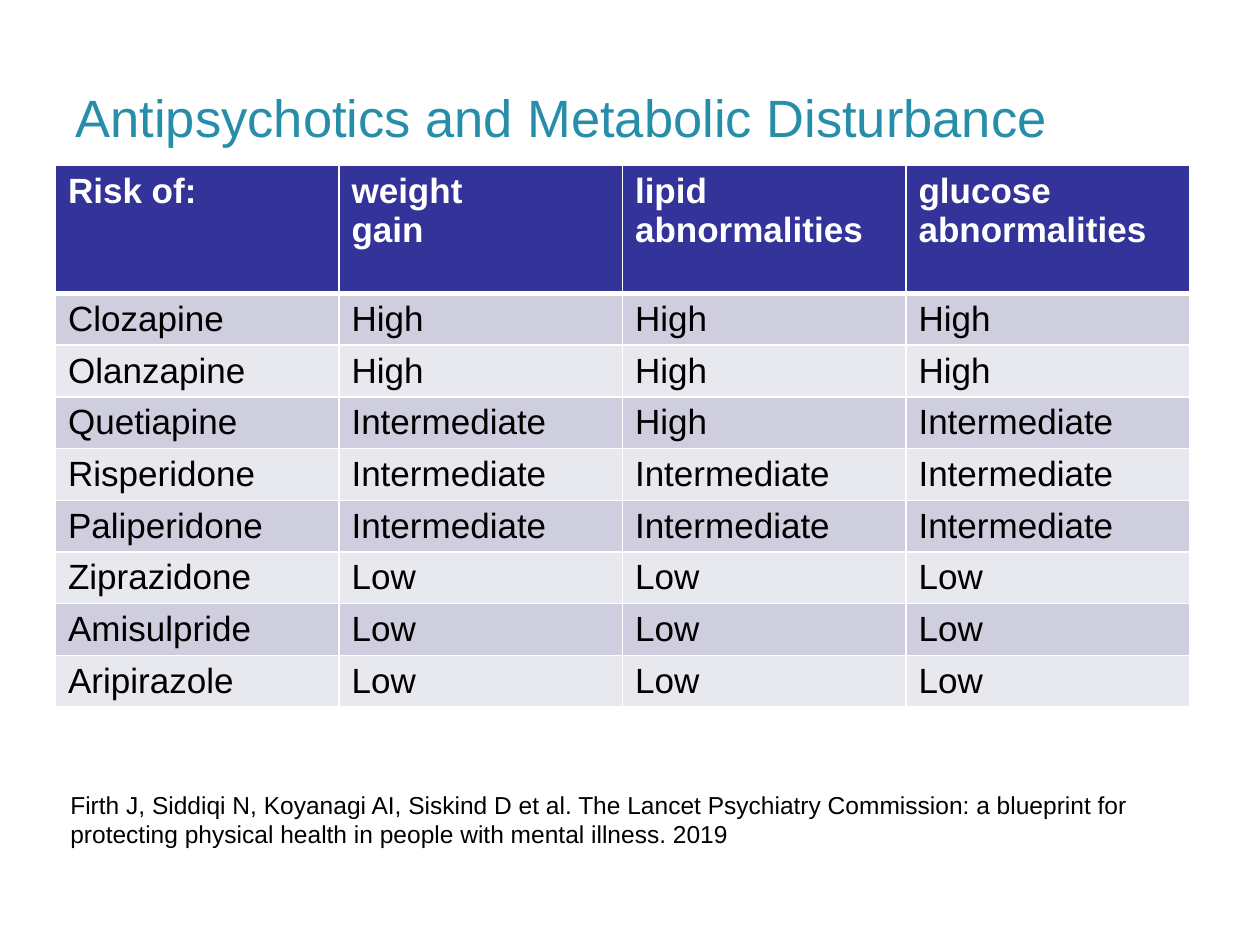
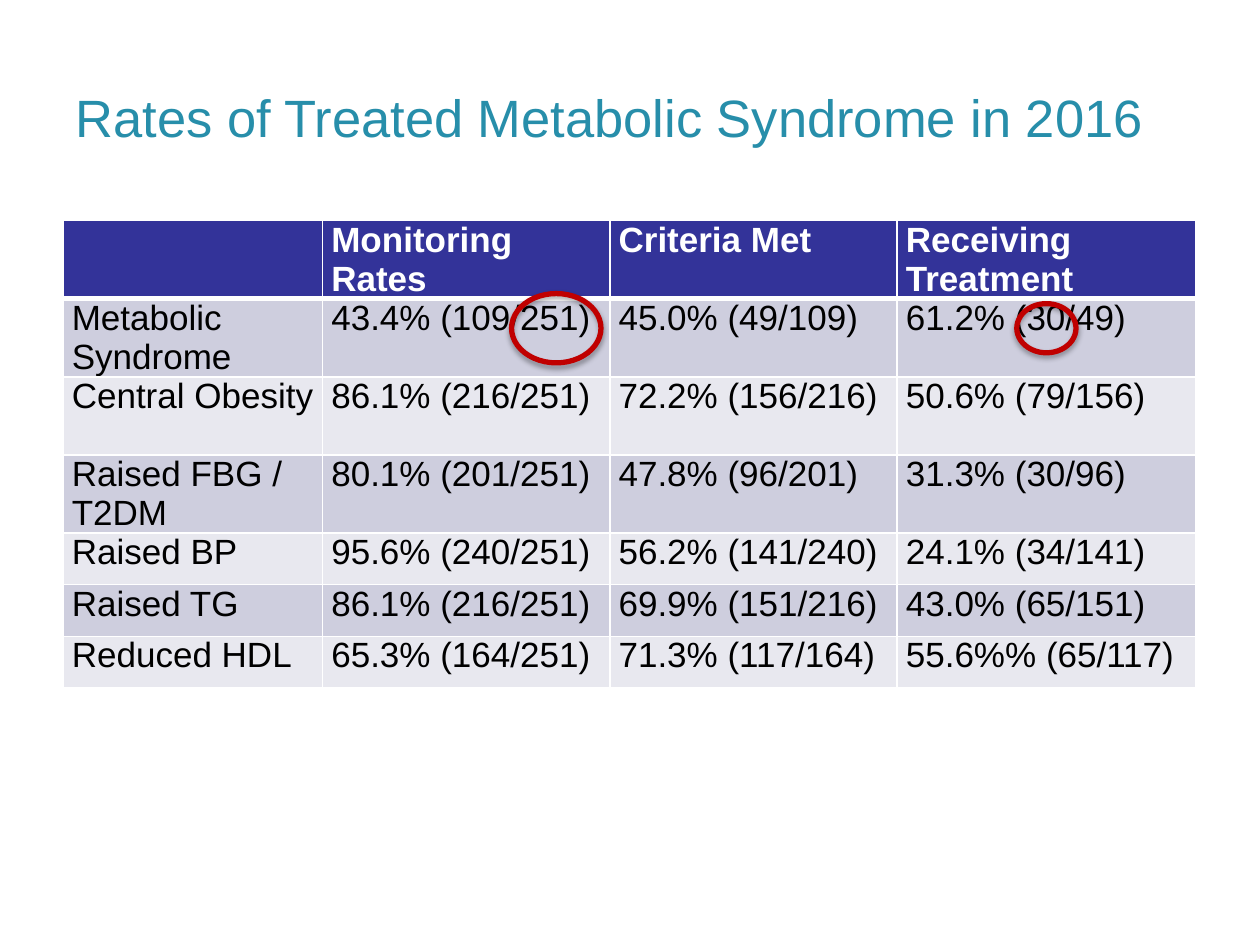
from lxml import etree
from pptx import Presentation
from pptx.dml.color import RGBColor
from pptx.enum.shapes import MSO_SHAPE as SHAPE
from pptx.enum.text import MSO_ANCHOR as ANCHOR, PP_ALIGN as ALIGN
from pptx.oxml import parse_xml
from pptx.oxml.ns import nsdecls
from pptx.util import Pt

PX = 9144  # 100 px to the inch
FONT = "Arial"
TEAL, NAVY, RED = "278EAA", "333399", "C00000"
WHITE, BLACK = "FFFFFF", "000000"
BANDS = ["E8E8EF", "CECEDE"]


def rgb(color):
    return RGBColor.from_string(color)


def style(p, size, color, bold=False):
    p.alignment = ALIGN.LEFT
    p.font.name, p.font.size, p.font.bold = FONT, Pt(size), bold
    p.font.color.rgb = rgb(color)


# Content: title, table position, column widths, row heights, cell insets, rows
slides = [
    ("Antipsychotics and Metabolic Disturbance", (44, 131),
     [225] * 4, [102] + [41] * 8, (10, 5),
     [["Risk of:", "weight\ngain", "lipid abnormalities", "glucose abnormalities"],
      ["Clozapine", "High", "High", "High"],
      ["Olanzapine", "High", "High", "High"],
      ["Quetiapine", "Intermediate", "High", "Intermediate"],
      ["Risperidone", "Intermediate", "Intermediate", "Intermediate"],
      ["Paliperidone", "Intermediate", "Intermediate", "Intermediate"],
      ["Ziprazidone", "Low", "Low", "Low"],
      ["Amisulpride", "Low", "Low", "Low"],
      ["Aripirazole", "Low", "Low", "Low"]]),
    ("Rates of Treated Metabolic Syndrome in 2016", (50, 175),
     [206, 228, 228, 237], [62] * 4 + [41] * 3, (7, 0),
     [["", "Monitoring Rates", "Criteria Met", "Receiving Treatment"],
      ["Metabolic Syndrome", "43.4% (109/251)", "45.0% (49/109)", "61.2% (30/49)"],
      ["Central Obesity", "86.1% (216/251)", "72.2% (156/216)", "50.6% (79/156)"],
      ["Raised FBG / T2DM", "80.1% (201/251)", "47.8% (96/201)", "31.3% (30/96)"],
      ["Raised BP", "95.6% (240/251)", "56.2% (141/240)", "24.1% (34/141)"],
      ["Raised TG", "86.1% (216/251)", "69.9% (151/216)", "43.0% (65/151)"],
      ["Reduced HDL", "65.3% (164/251)", "71.3% (117/164)", "55.6%% (65/117)"]]),
]

prs = Presentation()
prs.slide_width, prs.slide_height = 1000 * PX, 750 * PX

for title, (x, y), widths, heights, (inset_x, inset_y), rows in slides:
    s = prs.slides.add_slide(prs.slide_layouts[5])

    # Title
    sp = s.shapes.title
    sp.left, sp.top, sp.width, sp.height = 50 * PX, 30 * PX, 900 * PX, 125 * PX
    tf = sp.text_frame
    tf.text = title
    tf.vertical_anchor = ANCHOR.MIDDLE
    style(tf.paragraphs[0], 30, TEAL)

    # Table
    table = s.shapes.add_table(len(rows), len(widths), x * PX, y * PX,
                               sum(widths) * PX, sum(heights) * PX).table
    for col, width in zip(table.columns, widths):
        col.width = width * PX
    for i, (row, height) in enumerate(zip(rows, heights)):
        table.rows[i].height = height * PX
        for j, text in enumerate(row):
            cell = table.cell(i, j)
            cell.margin_left = cell.margin_right = inset_x * PX
            cell.margin_top = cell.margin_bottom = inset_y * PX
            cell.text = text
            for p in cell.text_frame.paragraphs:
                style(p, 20, BLACK if i else WHITE, bold=i == 0)
            cell.fill.solid()
            cell.fill.fore_color.rgb = rgb(BANDS[i % 2] if i else NAVY)
            # White borders, thick under the header; they precede the fill
            borders = {"L": 1, "R": 1, "T": 3 if i == 1 else 1, "B": 1 if i else 3}
            for k, (side, pt) in enumerate(borders.items()):
                cell._tc.get_or_add_tcPr().insert(k, parse_xml(
                    f'<a:ln{side} {nsdecls("a")} w="{Pt(pt)}"><a:solidFill>'
                    f'<a:srgbClr val="{WHITE}"/></a:solidFill></a:ln{side}>'))

risk_slide, rates_slide = prs.slides

# Reference under the risk table
tf = risk_slide.shapes.add_textbox(46 * PX, 622 * PX, 909 * PX, 57 * PX).text_frame
tf.word_wrap = True
tf.text = ("Firth J, Siddiqi N, Koyanagi AI, Siskind D et al. The Lancet Psychiatry "
           "Commission: a blueprint for protecting physical health in people with "
           "mental illness. 2019")
style(tf.paragraphs[0], 14, BLACK)

# Red rings around the key counts, with a soft shadow below
for x, y, w, h in [(406, 233, 71, 55), (807, 241, 47, 39)]:
    ring = rates_slide.shapes.add_shape(SHAPE.OVAL, x * PX, y * PX, w * PX, h * PX)
    ring.fill.background()
    ring.line.color.rgb = rgb(RED)
    ring.line.width = Pt(3)
    ring.shadow.inherit = False
    effects = ring._element.spPr.find("{*}effectLst")
    effects.append(parse_xml(
        f'<a:outerShdw {nsdecls("a")} blurRad="{Pt(3.1)}" dist="{Pt(1.8)}" '
        f'dir="5400000" rotWithShape="0"><a:srgbClr val="{BLACK}">'
        '<a:alpha val="35000"/></a:srgbClr></a:outerShdw>'))

prs.save("out.pptx")
